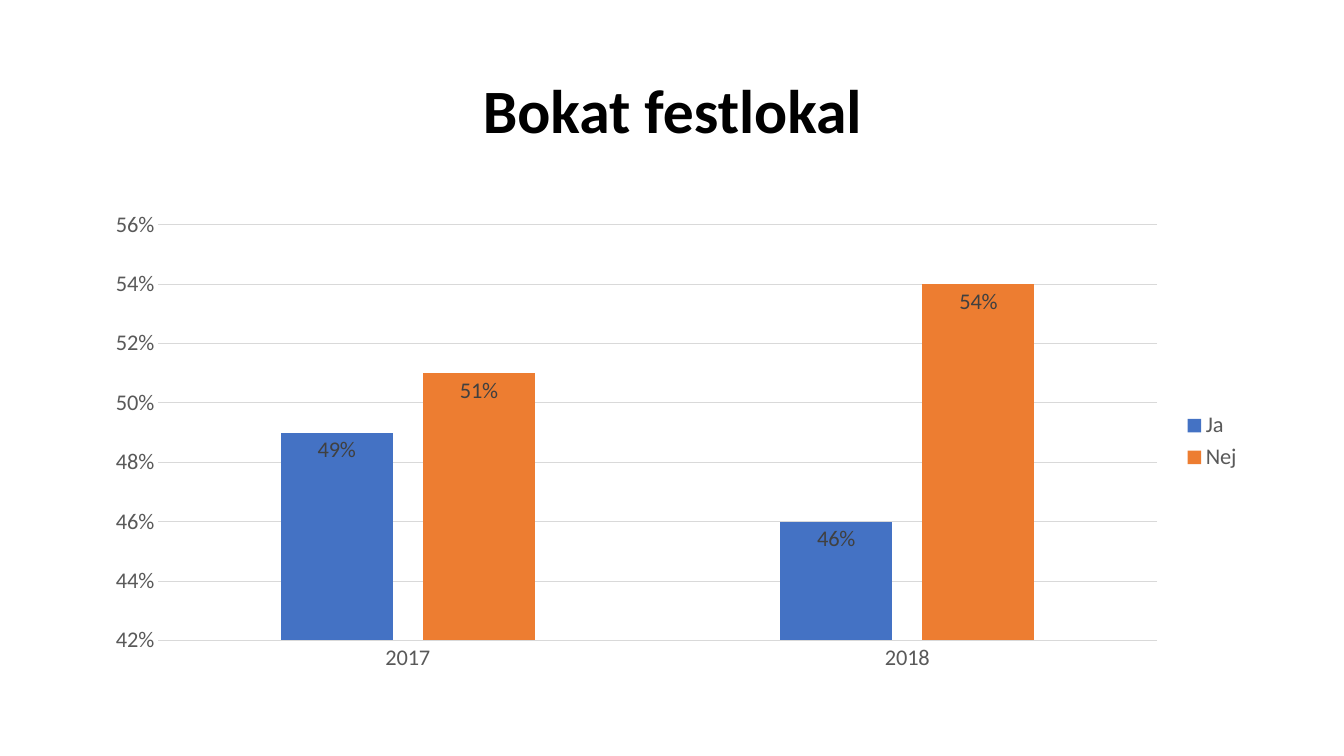
from pptx import Presentation
from pptx.chart.data import CategoryChartData
from pptx.dml.color import RGBColor
from pptx.enum.chart import XL_CHART_TYPE, XL_LABEL_POSITION, XL_LEGEND_POSITION, XL_TICK_MARK
from pptx.enum.text import MSO_ANCHOR, PP_ALIGN
from pptx.util import Inches, Pt

COLUMNS = XL_CHART_TYPE.COLUMN_CLUSTERED
INSIDE_END = XL_LABEL_POSITION.INSIDE_END
RIGHT = XL_LEGEND_POSITION.RIGHT
NO_TICK = XL_TICK_MARK.NONE
MIDDLE = MSO_ANCHOR.MIDDLE
CENTER = PP_ALIGN.CENTER

FONT = "Calibri"
COLORS = {"title": "000000", "axis": "595959", "label": "404040",
          "grid": "D9D9D9", "Ja": "4472C4", "Nej": "ED7D31"}
ANSWERS = {"Ja": (0.49, 0.46), "Nej": (0.51, 0.54)}


def rgb(name):
    return RGBColor.from_string(COLORS[name])


def set_font(font, size, color):
    font.name = FONT
    font.size = Pt(size)
    font.color.rgb = rgb(color)


prs = Presentation()
prs.slide_width, prs.slide_height = Inches(13.33), Inches(7.5)
s = prs.slides.add_slide(prs.slide_layouts[5])

# Title
title = s.shapes.title
title.left, title.top = Inches(0.92), Inches(0.4)
title.width, title.height = Inches(11.5), Inches(1.45)
tf = title.text_frame
tf.text = "Bokat festlokal"
tf.vertical_anchor = MIDDLE
p = tf.paragraphs[0]
p.alignment = CENTER
p.line_spacing = 0.9
p.font.bold = True
set_font(p.font, 44, "title")

# Chart
data = CategoryChartData(number_format="0%")
data.categories = ["2017", "2018"]
for answer, shares in ANSWERS.items():
    data.add_series(answer, shares)
chart = s.shapes.add_chart(COLUMNS, Inches(0.92), Inches(2), Inches(11.5),
                           Inches(4.76), data).chart
chart.has_title = False
set_font(chart.font, 16, "axis")

# Columns and their labels
plot = chart.plots[0]
plot.gap_width = 219
plot.overlap = -27
plot.vary_by_categories = False
for series in plot.series:
    series.format.fill.solid()
    series.format.fill.fore_color.rgb = rgb(series.name)
    labels = series.data_labels
    labels.show_value = True
    labels.position = INSIDE_END
    labels.number_format = "0%"
    labels.number_format_is_linked = False
    set_font(labels.font, 16, "label")

# Axes
years, shares = chart.category_axis, chart.value_axis
for axis in (years, shares):
    axis.major_tick_mark = axis.minor_tick_mark = NO_TICK
    set_font(axis.tick_labels.font, 16, "axis")
shares.minimum_scale, shares.maximum_scale = 0.42, 0.56
shares.major_unit = 0.02
shares.tick_labels.number_format = "0%"
shares.tick_labels.number_format_is_linked = False
shares.format.line.fill.background()
for line in (years.format.line, shares.major_gridlines.format.line):
    line.color.rgb = rgb("grid")
    line.width = Pt(0.75)

# Legend
chart.has_legend = True
chart.legend.position = RIGHT
chart.legend.include_in_layout = False
set_font(chart.legend.font, 16, "axis")

prs.save("out.pptx")
